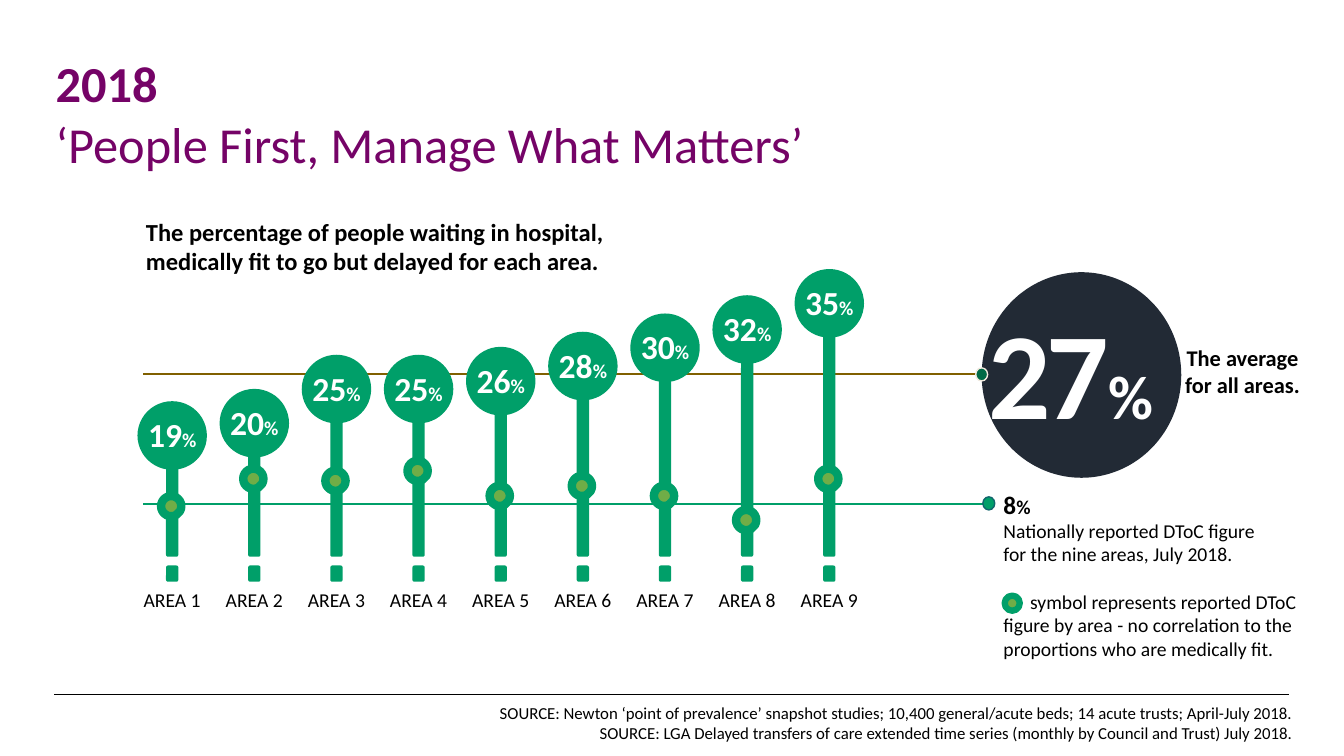
from lxml.etree import SubElement
from pptx import Presentation
from pptx.dml.color import RGBColor
from pptx.enum.shapes import MSO_CONNECTOR, MSO_SHAPE
from pptx.enum.text import MSO_ANCHOR, MSO_AUTO_SIZE, PP_ALIGN
from pptx.oxml.ns import qn
from pptx.util import Cm, Pt

GREEN, DARK_GREEN, OLIVE = "009F69", "006A46", "70AD47"
BLACK, WHITE, PURPLE, NAVY = "000000", "FFFFFF", "750367", "222A35"

# percentage, circle top, stem top, reported-figure dot top (cm)
AREAS = [
    (19, 10.11, 10.24, 12.5),
    (20, 9.8, 9.83, 11.81),
    (25, 8.94, 9.19, 11.86),
    (25, 8.94, 9.12, 11.61),
    (26, 8.74, 8.76, 12.24),
    (28, 8.36, 8.43, 11.99),
    (30, 7.9, 8.43, 12.24),
    (32, 7.44, 8.43, 12.85),
    (35, 6.78, 8.43, 11.81),
]
FIRST_CENTRE, PITCH = 4.34, 2.07
STEM_WIDTH, STEM_BOTTOM = 0.31, 14.03


def colour(hex_string):
    return RGBColor.from_string(hex_string)


def write_text(frame, paragraphs, size=14, color=BLACK, bold=False, align=PP_ALIGN.LEFT,
               space_before=0, first_indent=0, spacing=None):
    """Append paragraphs, each a list of (text, run size, run bold); None keeps the default."""
    for runs in paragraphs:
        first = not frame.paragraphs[0].runs
        paragraph = frame.paragraphs[0] if first else frame.add_paragraph()
        paragraph.alignment = align
        paragraph.space_before = Pt(0 if first else space_before)
        if first_indent:
            paragraph._p.get_or_add_pPr().set("indent", str(Cm(first_indent)))
        for text, run_size, run_bold in runs:
            for index, line in enumerate(text.split("\n")):
                if index:
                    paragraph.add_line_break()
                run = paragraph.add_run()
                run.text = line
                run.font.name = "Calibri"
                run.font.size = Pt(run_size or size)
                run.font.bold = bold if run_bold is None else run_bold
                run.font.color.rgb = colour(color)
                if spacing:
                    run._r.get_or_add_rPr().set("spc", str(spacing))


def plain(text):
    return [(text, None, None)]


class SlideBuilder:
    def __init__(self, presentation):
        self.slide = presentation.slides.add_slide(presentation.slide_layouts[5])

    def title(self, paragraphs, left, top, width, height, **style):
        shape = self.slide.shapes.title
        shape.left, shape.top, shape.width, shape.height = map(Cm, (left, top, width, height))
        frame = shape.text_frame
        frame.margin_left = frame.margin_right = frame.margin_top = frame.margin_bottom = 0
        frame.vertical_anchor = MSO_ANCHOR.TOP
        frame.auto_size = MSO_AUTO_SIZE.NONE
        frame.word_wrap = True
        write_text(frame, paragraphs, **style)

    def text(self, paragraphs, left, top, width, height, anchor=MSO_ANCHOR.TOP, wrap=True, **style):
        box = self.slide.shapes.add_textbox(Cm(left), Cm(top), Cm(width), Cm(height))
        frame = box.text_frame
        frame.word_wrap = wrap
        frame.vertical_anchor = anchor
        write_text(frame, paragraphs, **style)
        return frame

    def shape(self, kind, left, top, width, height, fill, line=None, line_width=1):
        shape = self.slide.shapes.add_shape(kind, Cm(left), Cm(top), Cm(width), Cm(height))
        shape.shadow.inherit = False
        shape.fill.solid()
        shape.fill.fore_color.rgb = colour(fill)
        if line:
            shape.line.color.rgb = colour(line)
            shape.line.width = Pt(line_width)
        else:
            shape.line.fill.background()

    def ellipse(self, *position, **style):
        self.shape(MSO_SHAPE.OVAL, *position, **style)

    def bar(self, *position):
        self.shape(MSO_SHAPE.ROUNDED_RECTANGLE, *position, fill=GREEN)

    def horizontal_line(self, left, right, top, color, width):
        connector = self.slide.shapes.add_connector(
            MSO_CONNECTOR.STRAIGHT, Cm(left), Cm(top), Cm(right), Cm(top))
        connector.line.color.rgb = colour(color)
        connector.line.width = Pt(width)
        SubElement(connector._element.spPr, qn("a:effectLst"))

    def area_column(self, number, percentage, circle_top, stem_top, dot_top):
        centre = FIRST_CENTRE + (number - 1) * PITCH
        stem_left, circle_left = centre - STEM_WIDTH / 2, centre - 0.875
        self.bar(stem_left, stem_top, STEM_WIDTH, STEM_BOTTOM - stem_top)
        self.bar(stem_left, 14.25, STEM_WIDTH, 0.41)
        self.ellipse(circle_left, circle_top, 1.75, 1.73, fill=GREEN)
        self.text([[(str(percentage), 24, True), ("%", 14, True)]],
                  circle_left, circle_top + 0.2, 1.75, 1.27,
                  wrap=False, color=WHITE, align=PP_ALIGN.CENTER)
        self.text([plain(f"AREA {number}")], centre - 0.98, 14.68, 1.96, 0.86,
                  wrap=False, align=PP_ALIGN.CENTER)
        self.ellipse(centre - 0.28, dot_top, 0.51, 0.51, fill=OLIVE, line=GREEN, line_width=6)


def main():
    presentation = Presentation()
    presentation.slide_width, presentation.slide_height = Cm(33.87), Cm(19.05)
    builder = SlideBuilder(presentation)

    builder.title([[("2018\n", None, True), ("‘People First, Manage What Matters’", None, False)]],
                  1.4, 1.32, 23.5, 2.54, size=36, color=PURPLE)
    builder.horizontal_line(1.37, 32.49, 17.5, BLACK, 0.25)
    builder.horizontal_line(3.61, 24.84, 12.7, GREEN, 1)
    builder.ellipse(24.74, 6.86, 5.03, 5.18, fill=NAVY)
    builder.horizontal_line(3.61, 24.84, 9.42, "806000", 1)

    for number, area in enumerate(AREAS, start=1):
        builder.area_column(number, *area)

    builder.text([plain("The percentage of people waiting in hospital,\n"
                        "medically fit to go but delayed for each area.")],
                 3.43, 5.56, 16.59, 1.3, anchor=MSO_ANCHOR.MIDDLE, size=17.5, bold=True)
    builder.text([[("27", 88, True), ("%", 44, True)]], 23.67, 8.03, 5.66, 2.59,
                 anchor=MSO_ANCHOR.MIDDLE, color=WHITE, align=PP_ALIGN.RIGHT, spacing=-300)
    builder.ellipse(24.59, 9.27, 0.3, 0.33, fill=DARK_GREEN, line="F1E9DE")
    builder.text([plain("The average\nfor all areas.")], 28.24, 8.69, 6.15, 1.3,
                 anchor=MSO_ANCHOR.MIDDLE, size=16, bold=True, align=PP_ALIGN.CENTER)

    builder.ellipse(24.77, 12.52, 0.3, 0.33, fill=GREEN, line="10656C")
    builder.text([[("8", 18, True), ("%", 14, True)]], 25.04, 12.27, 7.87, 0.86,
                 anchor=MSO_ANCHOR.MIDDLE)
    builder.ellipse(25.32, 15.01, 0.38, 0.38, fill=OLIVE, line=GREEN, line_width=4.5)
    legend = builder.text([plain("Nationally reported DToC figure\nfor the nine areas, July 2018.")],
                          25.04, 12.95, 8.31, 3.84)
    write_text(legend, [plain("symbol represents reported DToC figure by area - no correlation "
                              "to the proportions who are medically fit.")],
               space_before=17, first_indent=0.67)

    builder.text([plain("SOURCE: Newton ‘point of prevalence’ snapshot studies; 10,400 general/acute "
                        "beds; 14 acute trusts; April-July 2018."),
                  plain("SOURCE: LGA Delayed transfers of care extended time series "
                        "(monthly by Council and Trust) July 2018.")],
                 11.94, 17.58, 20.9, 1.27, size=12, align=PP_ALIGN.RIGHT)
    presentation.save("out.pptx")


if __name__ == "__main__":
    main()
